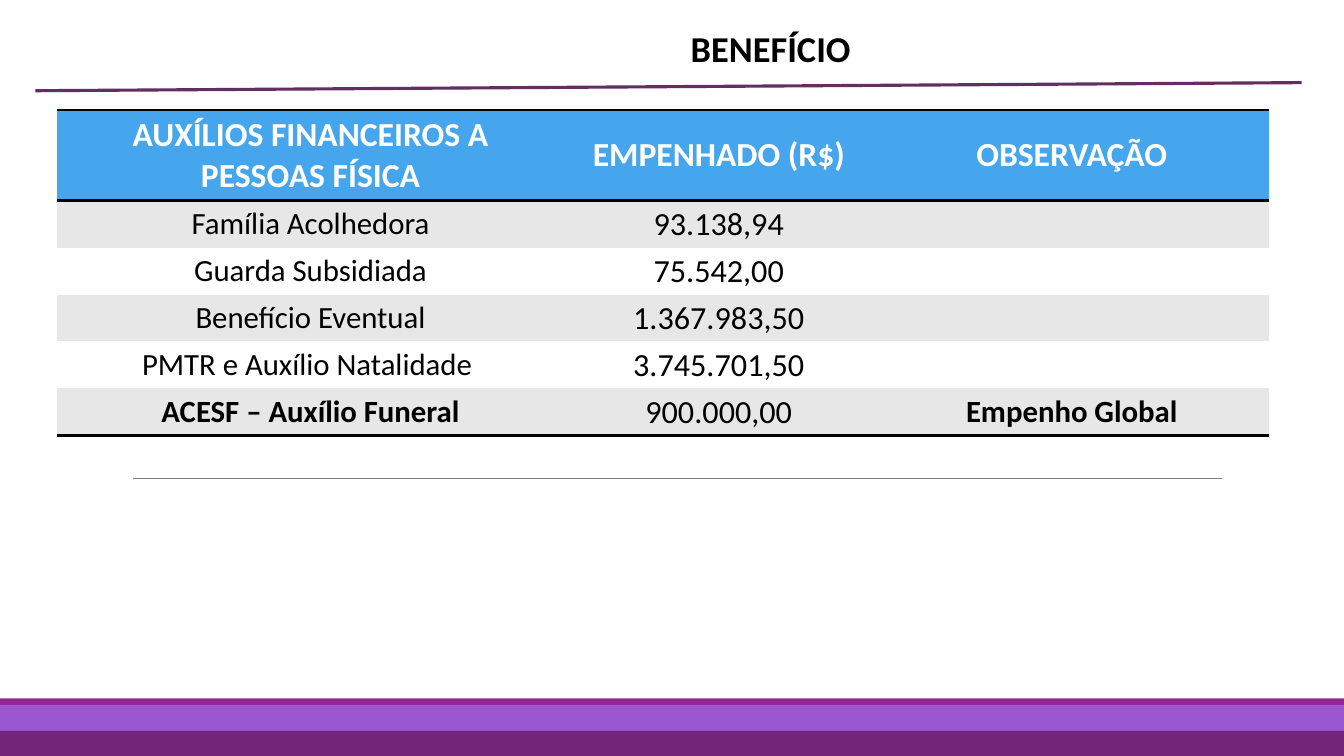
from lxml.etree import SubElement
from pptx import Presentation
from pptx.dml.color import RGBColor
from pptx.enum.shapes import MSO_CONNECTOR, MSO_SHAPE
from pptx.enum.text import MSO_ANCHOR, PP_ALIGN
from pptx.oxml.ns import qn
from pptx.util import Inches, Pt

FONT = "Calibri"
TITLE = "BENEFÍCIO"
HEADER = ("AUXÍLIOS FINANCEIROS A PESSOAS FÍSICA", "EMPENHADO (R$)", "OBSERVAÇÃO")
BENEFITS = [
    ("Família Acolhedora", "93.138,94", ""),
    ("Guarda Subsidiada", "75.542,00", ""),
    ("Benefício Eventual", "1.367.983,50", ""),
    ("PMTR e Auxílio Natalidade ", "3.745.701,50", ""),
    ("ACESF – Auxílio Funeral", "900.000,00", "Empenho Global"),
]
BOLD_TEXTS = {*HEADER, "ACESF – Auxílio Funeral", "Empenho Global"}
COLUMN_WIDTHS = (5.02, 3.08, 3.92)
COLUMN_SIZES = (22, 23, 22)
TABLE_LEFT, TABLE_TOP, TABLE_HEIGHT, HEADER_HEIGHT = 0.57, 1.09, 3.23, 0.9
NO_STYLE = "{2D5ABB26-0587-4C30-8999-92F81FD0307C}"
PAGE_WIDTH, PAGE_HEIGHT = 13.33, 7.5
BANDS = [
    (7, 0.5, "9B57D3", 100),
    (6.93, 0.07, "92278F", 100),
    (7.25, 0.25, "6D1D6B", 85),
]
RULES = [
    ((1.32, 4.75), (12.12, 4.75), "808080", 0.5),
    ((0.35, 0.9), (12.91, 0.82), "632E62", 2.25),
]


def color(value):
    return RGBColor.from_string(value)


def paint(fill, value):
    fill.solid()
    fill.fore_color.rgb = color(value)


def add_band(page, top, height, value, opacity):
    band = page.shapes.add_shape(
        MSO_SHAPE.RECTANGLE, 0, Inches(top), Inches(PAGE_WIDTH), Inches(height))
    band.shadow.inherit = False
    band.line.fill.background()
    paint(band.fill, value)
    if opacity < 100:
        tint = next(band.element.spPr.iter(qn("a:srgbClr")))
        SubElement(tint, qn("a:alpha"), val=str(opacity * 1000))


def add_rule(page, start, end, value, width):
    points = [Inches(number) for number in (*start, *end)]
    rule = page.shapes.add_connector(MSO_CONNECTOR.STRAIGHT, *points)
    rule.line.color.rgb = color(value)
    rule.line.width = Pt(width)
    SubElement(rule.element.spPr, qn("a:effectLst"))


def write(frame, text, size, value, bold):
    para = frame.paragraphs[0]
    para.alignment = PP_ALIGN.CENTER
    span = para.add_run()
    span.text = text
    span.font.name = FONT
    span.font.size = Pt(size)
    span.font.bold = bold
    span.font.color.rgb = color(value)


def add_title(page):
    box = page.shapes.add_textbox(Inches(5), Inches(0.21), Inches(5.29), Inches(0.54))
    box.text_frame.word_wrap = True
    write(box.text_frame, TITLE, 26, "000000", True)


def add_border(cell, side):
    properties = cell._tc.get_or_add_tcPr()
    border = SubElement(properties, qn(f"a:ln{side}"), w=str(Pt(2)))
    SubElement(SubElement(border, qn("a:solidFill")), qn("a:srgbClr"), val="000000")


def fill_cell(cell, text, row, column):
    sides = "TB" if row == 0 else "B" if row == len(BENEFITS) else ""
    for side in sides:
        add_border(cell, side)
    paint(cell.fill, "45A5ED" if row == 0 else "E7E7E7" if row % 2 else "FFFFFF")
    cell.vertical_anchor = MSO_ANCHOR.MIDDLE
    cell.margin_top = cell.margin_bottom = Inches(0.04)
    if row and column == 1:
        cell.margin_left = cell.margin_right = cell.margin_top = Inches(0.01)
        cell.margin_bottom = 0
    if text:
        size = COLUMN_SIZES[column] if row else 24
        write(cell.text_frame, text, size, "000000" if row else "FFFFFF", text in BOLD_TEXTS)


def add_benefit_table(page):
    rows = [HEADER, *BENEFITS]
    frame = page.shapes.add_table(
        len(rows), len(HEADER), Inches(TABLE_LEFT), Inches(TABLE_TOP),
        Inches(sum(COLUMN_WIDTHS)), Inches(TABLE_HEIGHT))
    next(frame.element.iter(qn("a:tableStyleId"))).text = NO_STYLE
    table = frame.table
    for column, width in zip(table.columns, COLUMN_WIDTHS):
        column.width = Inches(width)
    body_height = (TABLE_HEIGHT - HEADER_HEIGHT) / len(BENEFITS)
    for row, texts in enumerate(rows):
        table.rows[row].height = Inches(body_height if row else HEADER_HEIGHT)
        for column, text in enumerate(texts):
            fill_cell(table.cell(row, column), text, row, column)


def main():
    """Build the benefits slide and save it."""
    deck = Presentation()
    deck.slide_width, deck.slide_height = Inches(PAGE_WIDTH), Inches(PAGE_HEIGHT)
    page = deck.slides.add_slide(deck.slide_layouts[6])
    for band in BANDS:
        add_band(page, *band)
    for rule in RULES:
        add_rule(page, *rule)
    add_title(page)
    add_benefit_table(page)
    deck.save("out.pptx")


if __name__ == "__main__":
    main()
